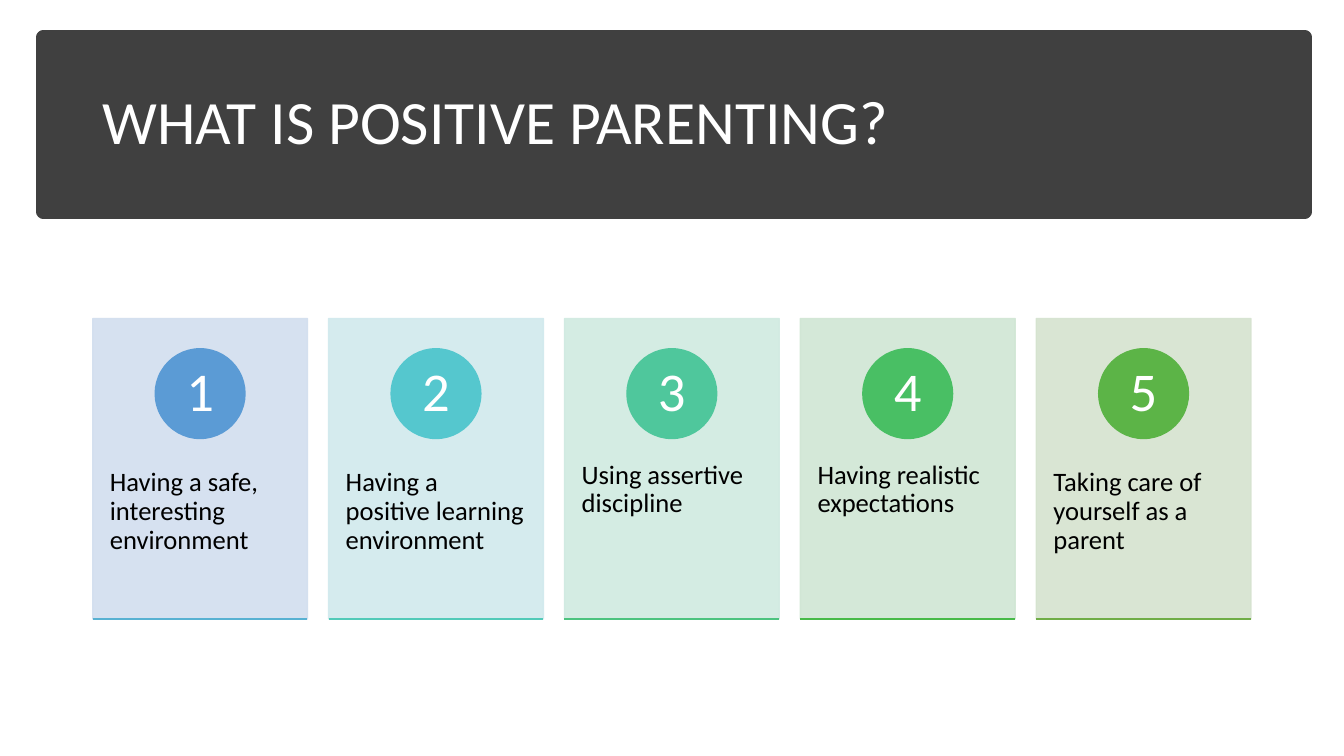
from typing import NamedTuple

from lxml import etree
from pptx import Presentation
from pptx.dml.color import RGBColor
from pptx.enum.shapes import MSO_CONNECTOR, MSO_SHAPE
from pptx.enum.text import MSO_ANCHOR, PP_ALIGN
from pptx.oxml.ns import qn
from pptx.util import Inches, Pt

RECT, OVAL = MSO_SHAPE.RECTANGLE, MSO_SHAPE.OVAL
LINE = MSO_CONNECTOR.STRAIGHT
TOP, MIDDLE = MSO_ANCHOR.TOP, MSO_ANCHOR.MIDDLE
LEFT, CENTER = PP_ALIGN.LEFT, PP_ALIGN.CENTER

WIDE, HIGH = Inches(13.33), Inches(7.5)
FONT = "Calibri"
DARK, WHITE, BLACK = "404040", "FFFFFF", "000000"
PITCH = 17.55


class Box(NamedTuple):
    """Shares of the slide, in percent."""
    x: float
    y: float
    w: float
    h: float

    def shift(self, step: float) -> "Box":
        return self._replace(x=self.x + step)

    def place(self) -> tuple[int, int, int, int]:
        return (round(WIDE * self.x / 100), round(HIGH * self.y / 100),
                round(WIDE * self.w / 100), round(HIGH * self.h / 100))


class Card(NamedTuple):
    label: str
    tint: str
    disc: str
    rule: str


BANNER = Box(3.23, 4.93, 93.85, 23.07)
TITLE = Box(6.9, 6.8, 86.27, 19.33)
PANEL = Box(6.9, 42.13, 15.98, 39.73)
LABEL = Box(6.9, 57.2, 15.98, 23.87)
DISC = Box(11.55, 46.13, 6.68, 11.87)

CARDS = [
    Card("Having a safe, interesting environment", "D2DEEF", "5B9BD5", "58B1D2"),
    Card("Having a positive learning environment", "D1E9ED", "55C7CE", "52CAB8"),
    Card("Using assertive discipline", "D0EAE1", "4FC79C", "4CC37F"),
    Card("Having realistic expectations", "D0E6D4", "49BF64", "47BA49"),
    Card("Taking care of yourself as a parent", "D5E3CF", "5CB447", "70AD47"),
]


def color(code: str) -> RGBColor:
    return RGBColor.from_string(code)


def add_shape(slide, kind, box: Box, code: str, width: float = 1, alpha: int = 100):
    shape = slide.shapes.add_shape(kind, *box.place())
    shape.shadow.inherit = False
    shape.fill.solid()
    shape.fill.fore_color.rgb = color(code)
    shape.line.color.rgb = color(code)
    shape.line.width = Pt(width)
    if alpha < 100:
        for node in shape.element.spPr.iter(qn("a:srgbClr")):
            etree.SubElement(node, qn("a:alpha"), val=str(alpha * 1000))
    return shape


def add_rule(slide, box: Box, code: str) -> None:
    x, y, w, h = box.place()
    rule = slide.shapes.add_connector(LINE, x, y + h, x + w, y + h)
    rule.line.color.rgb = color(code)
    rule.line.width = Pt(1)
    etree.SubElement(rule.element.spPr, qn("a:effectLst"))


def write(shape, text: str, size: float, code: str, pad: tuple[float, float],
          align=LEFT, anchor=MIDDLE) -> None:
    frame = shape.text_frame
    frame.word_wrap = True
    frame.vertical_anchor = anchor
    frame.margin_left = frame.margin_right = Inches(pad[0])
    frame.margin_top = frame.margin_bottom = Inches(pad[1])
    para = frame.paragraphs[0]
    para.text = text
    para.alignment = align
    para.line_spacing = 0.9
    para.font.name = FONT
    para.font.size = Pt(size)
    para.font.color.rgb = color(code)


def add_card(slide, index: int, card: Card) -> None:
    step = index * PITCH
    panel = PANEL.shift(step)
    add_shape(slide, RECT, panel, card.tint, alpha=90)
    label = slide.shapes.add_textbox(*LABEL.shift(step).place())
    write(label, card.label, 19, BLACK, (0.17, 0.36), anchor=TOP)
    disc = add_shape(slide, OVAL, DISC.shift(step), card.disc)
    write(disc, str(index + 1), 39, WHITE, (0.07, 0.01), align=CENTER)
    add_rule(slide, panel, card.rule)


def main() -> None:
    deck = Presentation()
    deck.slide_width, deck.slide_height = WIDE, HIGH
    slide = deck.slides.add_slide(deck.slide_layouts[6])
    add_shape(slide, RECT, BANNER, DARK, width=10)
    title = slide.shapes.add_textbox(*TITLE.place())
    write(title, "WHAT IS POSITIVE PARENTING?", 44, WHITE, (0.1, 0.05))
    for index, card in enumerate(CARDS):
        add_card(slide, index, card)
    deck.save("out.pptx")


if __name__ == "__main__":
    main()
